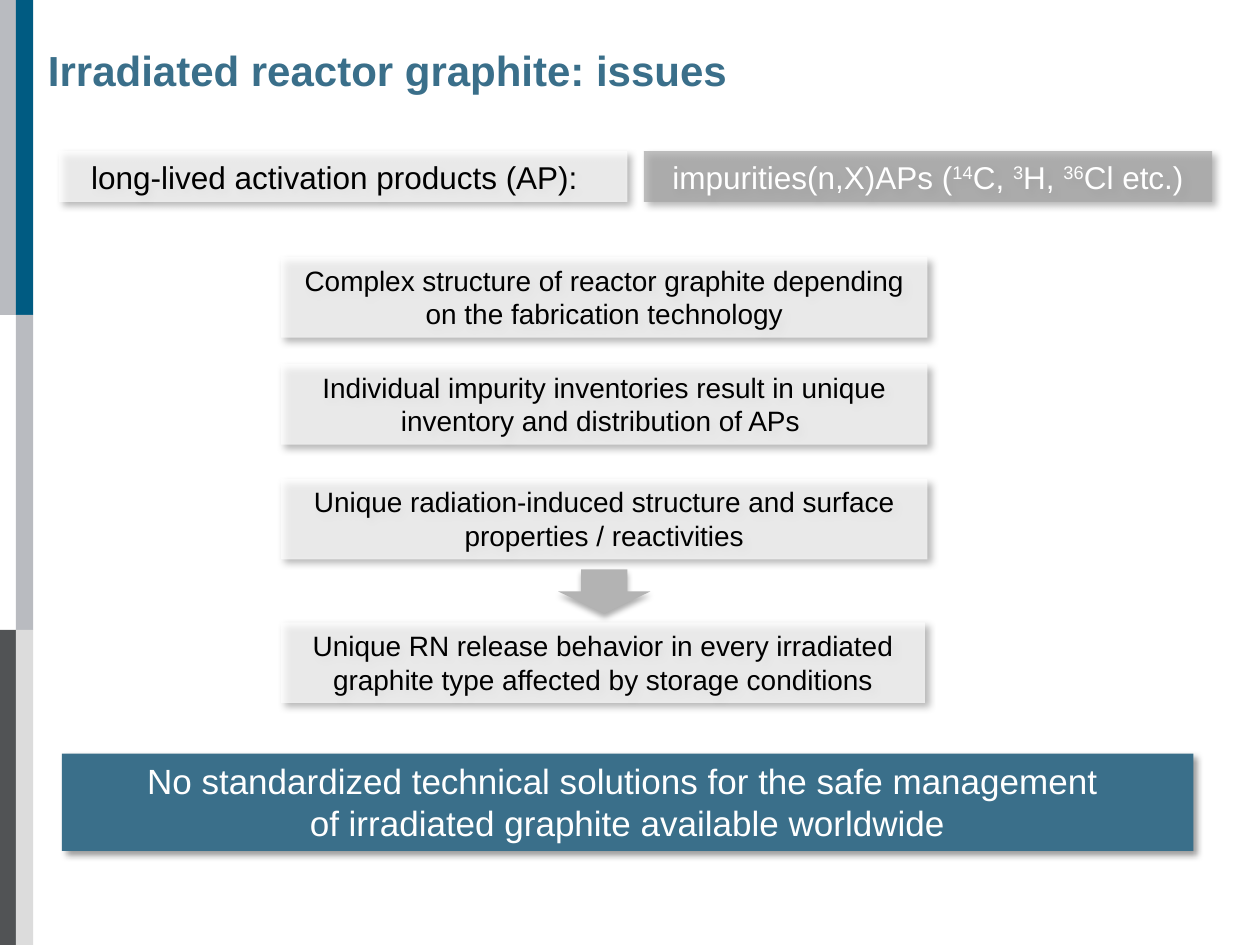
import pptx
import pptx.util
import pptx.dml.color
import pptx.enum.shapes
import pptx.enum.text
import pptx.oxml.ns
from dataclasses import dataclass
from lxml import etree

Pt = pptx.util.Pt
Shapes = pptx.enum.shapes.MSO_SHAPE
Anchor = pptx.enum.text.MSO_ANCHOR
Align = pptx.enum.text.PP_ALIGN
qn = pptx.oxml.ns.qn


@dataclass(frozen=True)
class Theme:
    font: str = "Arial"
    white: str = "FFFFFF"
    black: str = "000000"
    teal: str = "3A6F8A"
    navy: str = "005B82"
    dark: str = "515355"
    silver: str = "B9BBC0"
    pale: str = "DCDCDC"
    arrow: str = "B3B3B3"
    gray: str = "A6A6A6"
    title_size: int = 24
    banner_size: int = 20
    heading_size: int = 18
    issue_size: int = 16


theme = Theme()
deck = pptx.Presentation()
deck.slide_width, deck.slide_height = Pt(720), Pt(540)
page = deck.slides.add_slide(deck.slide_layouts[5])


def add_block(kind, place, color, opacity=100, shadow=None):
    shape = page.shapes.add_shape(kind, *[Pt(length) for length in place])
    shape.fill.solid()
    shape.fill.fore_color.rgb = pptx.dml.color.RGBColor.from_string(color)
    shape.line.fill.background()
    shape.shadow.inherit = False
    properties = shape.element.spPr
    if opacity < 100:
        tint = properties.find(qn("a:solidFill")).find(qn("a:srgbClr"))
        etree.SubElement(tint, qn("a:alpha"), val=str(opacity * 1000))
    if shadow:
        strength, blur, distance, angle = shadow
        effects = properties.find(qn("a:effectLst"))
        outer = etree.SubElement(
            effects, qn("a:outerShdw"), blurRad=str(Pt(blur)), dist=str(Pt(distance)),
            dir=str(angle * 60000), algn="tl", rotWithShape="0")
        tint = etree.SubElement(outer, qn("a:srgbClr"), val=theme.black)
        etree.SubElement(tint, qn("a:alpha"), val=str(strength * 1000))
    return shape


def write(shape, lines, size, color, align=Align.CENTER, anchor=Anchor.TOP, bold=False):
    box = shape.text_frame
    box.word_wrap = True
    box.vertical_anchor = anchor
    para = box.paragraphs[0]
    para.alignment = align
    for index, line in enumerate(lines):
        if index:
            para.add_line_break()
        for text, raised in line:
            span = para.add_run()
            span.text = text
            span.font.name = theme.font
            span.font.size = Pt(size)
            span.font.bold = bold
            span.font.color.rgb = pptx.dml.color.RGBColor.from_string(color)
            if raised:
                span._r.get_or_add_rPr().set("baseline", "30000")


box_shadow = (40, 4, 3, 45)
arrow_shadow = (32, 3.5, 2.2, 90)

bars = [
    (0, 0, theme.silver),
    (0, 2, theme.dark),
    (9, 0, theme.navy),
    (9, 1, theme.silver),
    (9, 2, theme.pale),
]
for left, row, color in bars:
    add_block(Shapes.RECTANGLE, (left, row * 180, 10, 180), color)

title = page.shapes.title
title.left, title.top, title.width, title.height = Pt(20.2), Pt(17.3), Pt(551.5), Pt(45.4)
write(title, [[("Irradiated reactor graphite: issues", False)]], theme.title_size,
      theme.teal, Align.LEFT, Anchor.MIDDLE, True)

products = [("long-lived activation products (AP):", False)]
impurities = [
    ("impurities(n,X)APs (", False), ("14", True), ("C, ", False), ("3", True),
    ("H, ", False), ("36", True), ("Cl etc.)", False),
]
headings = [
    (33.8, theme.white, theme.black, products, 17.2),
    (367.9, theme.gray, theme.white, impurities, 7.2),
]
for left, fill, color, line, inset in headings:
    heading = add_block(Shapes.RECTANGLE, (left, 86.4, 324.7, 29), fill, 70, box_shadow)
    heading.text_frame.margin_right = Pt(inset)
    write(heading, [line], theme.heading_size, color, anchor=Anchor.MIDDLE)

issues = [
    (146.9, 369.4, "Complex structure of reactor graphite depending on the fabrication technology"),
    (208.1, 369.4, "Individual impurity inventories result in unique inventory and distribution of APs "),
    (273.6, 369.4, "Unique radiation-induced structure and surface properties / reactivities"),
    (355.7, 367.9, "Unique RN release behavior in every irradiated graphite type affected by storage conditions"),
]
for top, width, text in issues:
    issue = add_block(Shapes.RECTANGLE, (160.6, top, width, 46), theme.white, 70, box_shadow)
    write(issue, [[(text, False)]], theme.issue_size, theme.black)

add_block(Shapes.DOWN_ARROW, (319, 325.4, 52.6, 25.2), theme.arrow, shadow=arrow_shadow)

banner = add_block(Shapes.RECTANGLE, (35.3, 430.6, 646.6, 55.7), theme.teal, shadow=box_shadow)
conclusion = [
    [("No standardized technical solutions for the safe management ", False)],
    [("of irradiated graphite available worldwide", False)],
]
write(banner, conclusion, theme.banner_size, theme.white)

deck.save("out.pptx")
